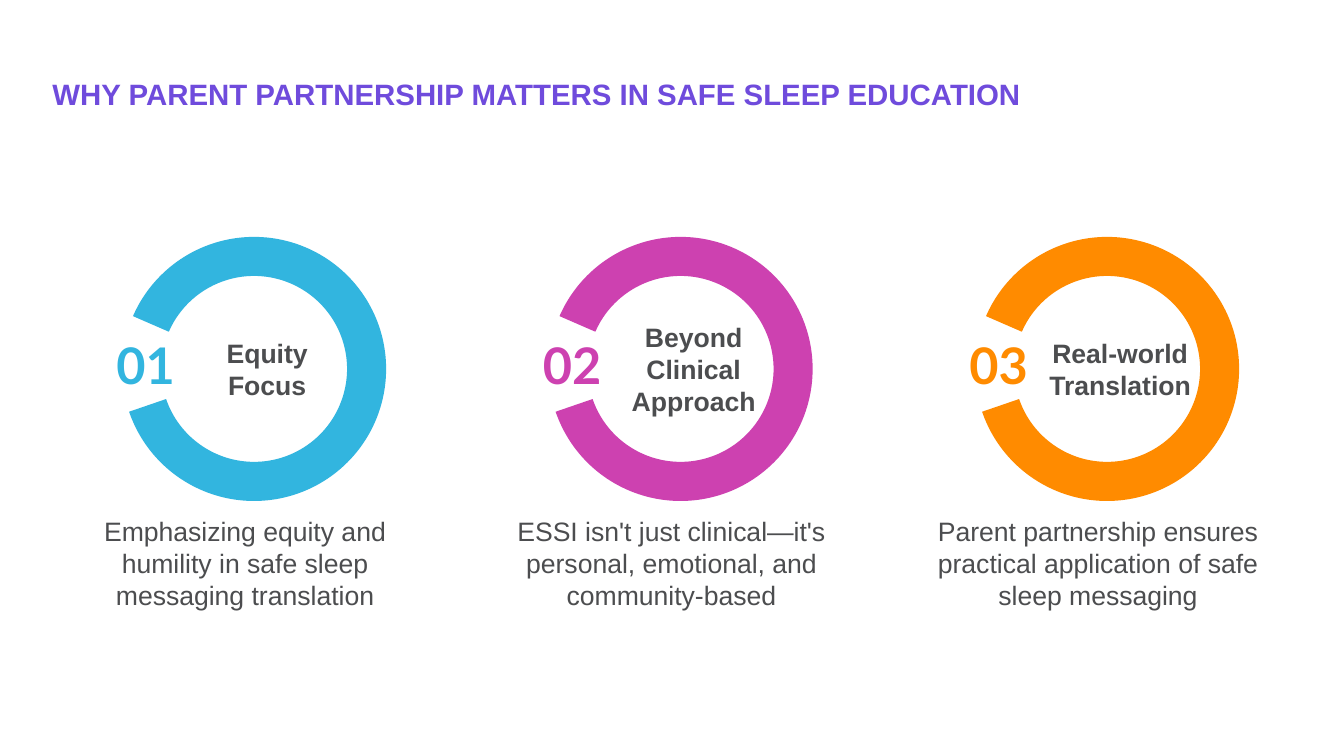
from dataclasses import dataclass

from pptx import Presentation
from pptx.dml.color import RGBColor
from pptx.enum.shapes import MSO_SHAPE
from pptx.enum.text import MSO_ANCHOR, MSO_AUTO_SIZE, PP_ALIGN
from pptx.util import Inches, Pt


@dataclass(frozen=True)
class Theme:
    title_color: str = "6F4BDC"
    text_color: str = "4C4D4F"
    accents: tuple = ("32B5DF", "CD41B0", "FF8B00")
    text_font: str = "Arial"
    number_font: str = "Lato"
    title_size: int = 21
    text_size: int = 19
    number_size: int = 36


THEME = Theme()

TITLE = "WHY PARENT PARTNERSHIP MATTERS IN SAFE SLEEP EDUCATION"
REASONS = [
    ("Equity Focus",
     "Emphasizing equity and humility in safe sleep messaging translation"),
    ("Beyond Clinical Approach",
     "ESSI isn't just clinical—it's personal, emotional, and community-based"),
    ("Real-world Translation",
     "Parent partnership ensures practical application of safe sleep messaging"),
]


def write_text(shape, text, size=THEME.text_size, font=THEME.text_font,
               color=THEME.text_color, bold=False, align=PP_ALIGN.CENTER,
               anchor=MSO_ANCHOR.TOP, auto_size=MSO_AUTO_SIZE.NONE, right_inset=0.1):
    frame = shape.text_frame
    frame.word_wrap = True
    frame.auto_size = auto_size
    frame.vertical_anchor = anchor
    frame.margin_left = Inches(0.1)
    frame.margin_right = Inches(right_inset)
    frame.margin_top = frame.margin_bottom = Inches(0.05)
    paragraph = frame.paragraphs[0]
    paragraph.alignment = align
    run = paragraph.add_run()
    run.text = text
    run.font.size = Pt(size)
    run.font.name = font
    run.font.bold = bold
    run.font.color.rgb = RGBColor.from_string(color)


def place_title(slide, left, top, width, height):
    title = slide.shapes.title
    title.left, title.top = Inches(left), Inches(top)
    title.width, title.height = Inches(width), Inches(height)
    write_text(title, TITLE, size=THEME.title_size, color=THEME.title_color,
               bold=True, align=PP_ALIGN.LEFT, anchor=MSO_ANCHOR.BOTTOM)


def add_reason(slide, left, top, width, number, heading, caption, accent):
    def box(x, y, box_width, box_height):
        return [Inches(value) for value in (left + x, top + y, box_width, box_height)]

    ring = slide.shapes.add_shape(MSO_SHAPE.BLOCK_ARC, *box(0.69, 0, 2.62, 2.62))
    for index, adjustment in enumerate((122.14, 96.65, 0.148)):
        ring.adjustments[index] = adjustment
    ring.shadow.inherit = False
    ring.fill.solid()
    ring.fill.fore_color.rgb = RGBColor.from_string(accent)
    ring.line.fill.background()

    write_text(slide.shapes.add_textbox(*box(0.52, 0.92, 0.71, 0.71)),
               f"{number:02}", size=THEME.number_size, font=THEME.number_font,
               color=accent, bold=True, auto_size=MSO_AUTO_SIZE.SHAPE_TO_FIT_TEXT,
               right_inset=0)
    write_text(slide.shapes.add_textbox(*box(0, 2.71, width, 1.66)), caption)
    write_text(slide.shapes.add_textbox(*box(1.23, 0.07, 1.8, 2.48)), heading,
               bold=True, anchor=MSO_ANCHOR.MIDDLE)


def add_reasons(slide, left, top, width, column_width):
    step = (width - column_width) / (len(REASONS) - 1)
    for index, (heading, caption) in enumerate(REASONS):
        add_reason(slide, left + index * step, top, column_width,
                   index + 1, heading, caption, THEME.accents[index])


def main():
    presentation = Presentation()
    presentation.slide_width = Inches(13.33)
    presentation.slide_height = Inches(7.5)
    slide = presentation.slides.add_slide(presentation.slide_layouts[5])
    place_title(slide, 0.42, 0.32, 12.47, 0.84)
    add_reasons(slide, 0.52, 2.35, 12.28, 3.82)
    presentation.save("out.pptx")


if __name__ == "__main__":
    main()
